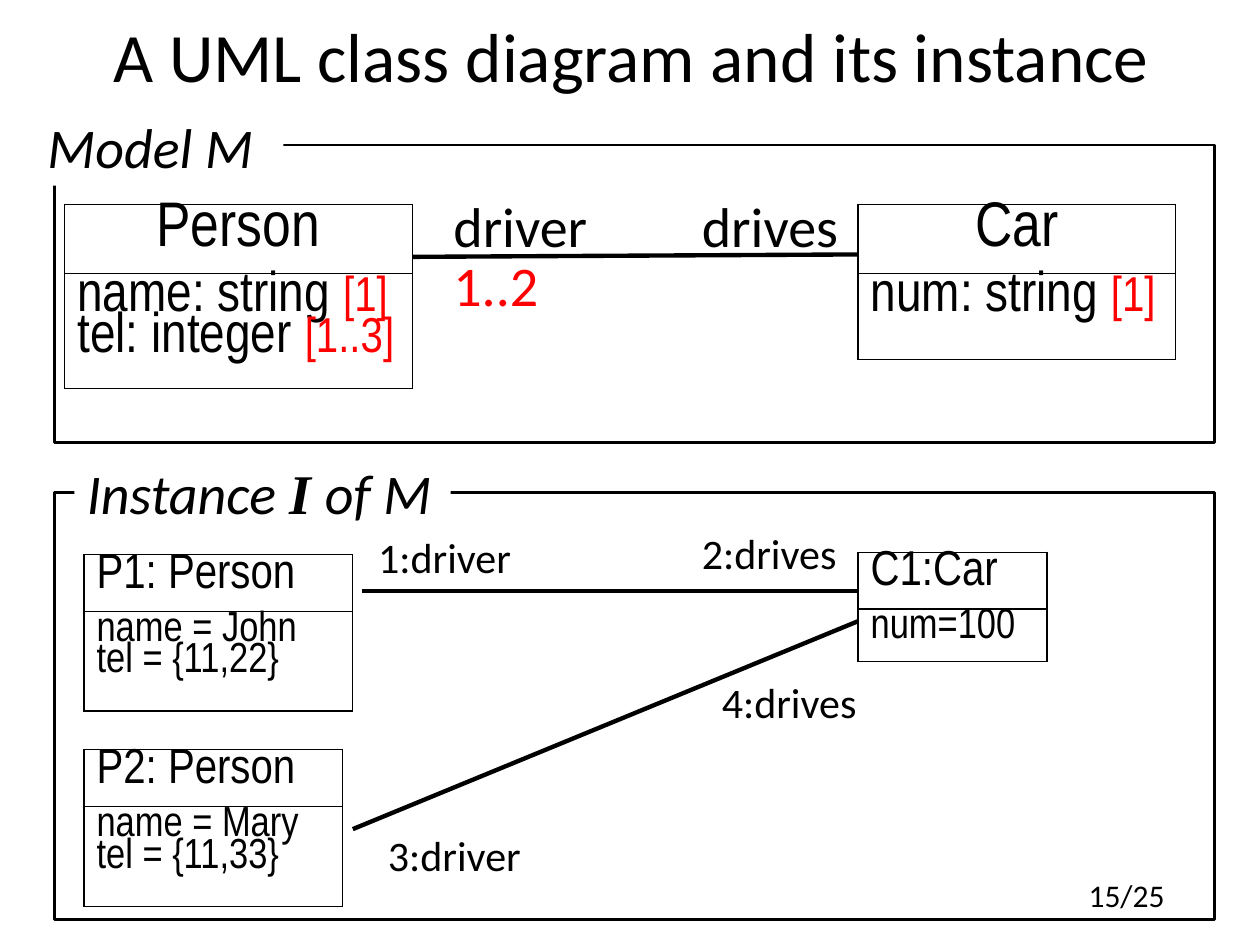
from dataclasses import dataclass

from lxml import etree
from pptx import Presentation
from pptx.dml.color import RGBColor
from pptx.enum import shapes, text
from pptx.oxml import ns
from pptx.util import Pt


@dataclass(frozen=True)
class Theme:
    """Colours, fonts and type sizes of the deck."""
    ink: RGBColor = RGBColor(0, 0, 0)
    accent: RGBColor = RGBColor(255, 0, 0)
    paper: RGBColor = RGBColor(255, 255, 255)
    sans: str = "Calibri"
    narrow: str = "Arial Narrow"
    serif: str = "Times New Roman"
    title: float = 39.6
    class_name: int = 36
    heading: int = 32
    object_name: int = 28
    value: int = 24
    number: int = 18


THEME = Theme()


def set_font(font, size, name=THEME.sans, color=THEME.ink):
    """Set size, typeface and colour of a font."""
    font.size, font.name = Pt(size), name
    font.color.rgb = color


def add_label(page, left, top, width, words, size, color=THEME.ink, filled=False):
    """Place a one-line label and return its paragraph."""
    box = page.shapes.add_textbox(Pt(left), Pt(top), Pt(width), Pt(size * 1.2 + 7.2))
    box.text_frame.word_wrap = True
    if filled:
        box.fill.solid()
        box.fill.fore_color.rgb = THEME.paper
    para = box.text_frame.paragraphs[0]
    para.text = words
    set_font(para.font, size, color=color)
    return para


def add_frame(page, left, top, width, height):
    """Draw the outline of a region."""
    box = page.shapes.add_shape(shapes.MSO_SHAPE.RECTANGLE, Pt(left), Pt(top), Pt(width), Pt(height))
    box.shadow.inherit = False
    box.fill.background()
    box.line.color.rgb = THEME.ink
    box.line.width = Pt(1.5)


def add_link(page, start, end):
    """Draw an association line between two points."""
    link = page.shapes.add_connector(shapes.MSO_CONNECTOR.STRAIGHT, *map(Pt, start + end))
    link.line.color.rgb = THEME.ink
    link.line.width = Pt(2.5)
    etree.SubElement(link._element.spPr, ns.qn("a:effectLst"))


def add_borders(cell, top, bottom):
    """Give a cell thin sides and the stated top and bottom widths."""
    properties = cell._tc.get_or_add_tcPr()
    widths = {"a:lnL": 0.75, "a:lnR": 0.75, "a:lnT": top, "a:lnB": bottom}
    for index, (tag, width) in enumerate(widths.items()):
        line = etree.Element(ns.qn(tag), w=str(int(Pt(width))))
        fill = etree.SubElement(line, ns.qn("a:solidFill"))
        etree.SubElement(fill, ns.qn("a:srgbClr"), val=str(THEME.ink))
        properties.insert(index, line)


def format_para(para, size):
    """Apply the tight narrow style of the class boxes."""
    para.line_spacing = 0.75
    para.space_before = Pt(1)
    set_font(para.font, size, THEME.narrow)


def add_card(page, left, top, width, body_height, name, rows, is_class=False):
    """Place a class or object box with its attribute rows."""
    name_height = 32.5
    table = page.shapes.add_table(
        2, 1, Pt(left), Pt(top), Pt(width), Pt(name_height + body_height)).table
    table.first_row = table.horz_banding = False
    table.rows[0].height, table.rows[1].height = Pt(name_height), Pt(body_height)
    head, body = table.cell(0, 0), table.cell(1, 0)
    for cell, top_width, bottom_width in ((head, 0.75, 1), (body, 1, 0.75)):
        cell.fill.background()
        add_borders(cell, top_width, bottom_width)
    para = head.text_frame.paragraphs[0]
    para.text = name
    format_para(para, THEME.class_name if is_class else THEME.object_name)
    if is_class:
        para.alignment = text.PP_ALIGN.CENTER
    for index, (words, count) in enumerate(rows):
        para = body.text_frame.paragraphs[0] if index == 0 else body.text_frame.add_paragraph()
        format_para(para, THEME.heading if is_class else THEME.value)
        para.add_run().text = words
        if count:
            span = para.add_run()
            span.text = count
            set_font(span.font, THEME.object_name, THEME.narrow, THEME.accent)


def add_title(page, left, top, width, height):
    """Fill and move the title placeholder."""
    title = page.shapes.title
    title.left, title.top, title.width, title.height = map(Pt, (left, top, width, height))
    title.text_frame.text = "A UML class diagram and its instance"
    title.text_frame.vertical_anchor = text.MSO_ANCHOR.MIDDLE
    para = title.text_frame.paragraphs[0]
    para.alignment = text.PP_ALIGN.CENTER
    set_font(para.font, THEME.title)


def add_model(page, left, top, width, height):
    """Draw the class diagram inside its frame."""
    add_frame(page, left, top, width, height)
    add_label(page, left - 11, top - 22.3, 142, "Model M", THEME.heading, filled=True).font.italic = True
    add_label(page, left + 221, top + 57, 73, "1..2", THEME.heading, THEME.accent, True)
    for across, words in ((221, "driver"), (363, "drives")):
        add_label(page, left + across, top + 23, 108, words, THEME.heading)
    add_card(page, left + 6, top + 34, 198.5, 59, "Person",
             [("name: string ", "[1]"), ("tel: integer ", "[1..3]")], True)
    add_card(page, left + 459.3, top + 34, 181.5, 49, "Car", [("num: string ", "[1]")], True)
    add_link(page, (left + 204.5, top + 64), (left + 459.3, top + 62.6))


def add_instance(page, left, top, width, height):
    """Draw the object diagram inside its frame."""
    add_frame(page, left, top, width, height)
    para = add_label(page, left + 11.5, top - 23, 215, "", THEME.heading, filled=True)
    para.font.italic = True
    for words, is_symbol in (("Instance ", False), ("I ", True), ("of M", False)):
        span = para.add_run()
        span.text = words
        if is_symbol:
            span.font.name, span.font.bold = THEME.serif, True
    people = (
        (35.3, 153.5, "P1: Person", "name = John", "tel = {11,22}"),
        (147, 147.5, "P2: Person", "name = Mary", "tel = {11,33}"),
    )
    for down, card_width, name, *values in people:
        add_card(page, left + 17, top + down, card_width, 57, name, [(value, "") for value in values])
    add_card(page, left + 459.3, top + 34, 108, 30, "C1:Car", [("num=100", "")])
    for start_x, start_y, end_y in ((175.6, 56.2, 56.2), (170.6, 192.3, 73.5)):
        add_link(page, (left + start_x, top + start_y), (left + 459.3, top + end_y))
    ends = ((178, 18.7, "1:driver"), (363, 16.6, "2:drives"),
            (183.6, 188.7, "3:driver"), (374.4, 101.5, "4:drives"))
    for across, down, words in ends:
        add_label(page, left + across, top + down, 102, words, THEME.value)


def main():
    """Build and save the deck."""
    deck = Presentation()
    deck.slide_width, deck.slide_height = Pt(720), Pt(540)
    page = deck.slides.add_slide(deck.slide_layouts[5])
    add_title(page, 36.7, -13.7, 648, 90)
    add_model(page, 31, 82.8, 663, 170)
    add_instance(page, 31, 281.5, 663, 244)
    add_label(page, 615, 496.8, 61, "15/25", THEME.number)
    deck.save("out.pptx")


if __name__ == "__main__":
    main()
